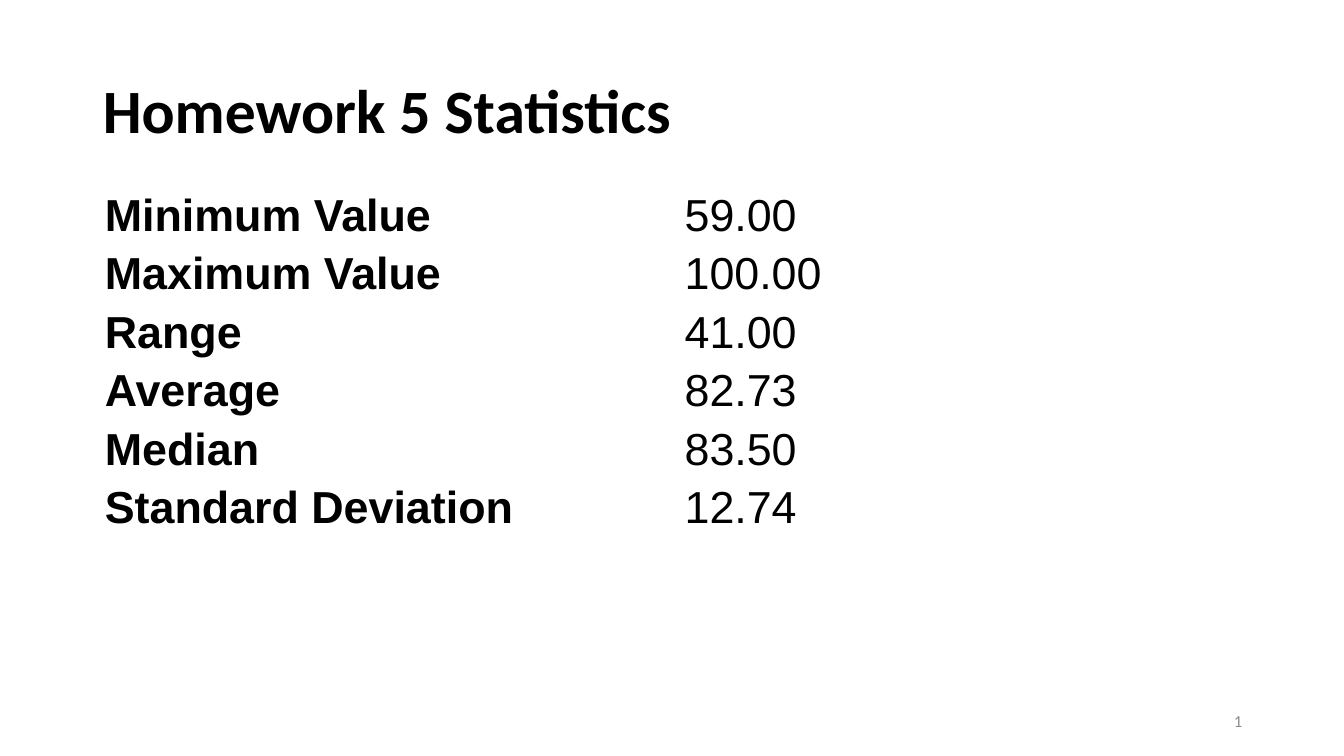
import dataclasses

import pptx
import pptx.dml.color
import pptx.enum.text
import pptx.util
from pptx.util import Inches

COLORS = {"text": "000000", "page_number": "8C8C8C"}
LEFT, WIDTH = 0.92, 11.5
ROW_HEIGHT = 0.58


@dataclasses.dataclass
class Statistic:
    label: str
    value: str


STATISTICS = [
    Statistic("Minimum Value", "59.00"),
    Statistic("Maximum Value", "100.00"),
    Statistic("Range", "41.00"),
    Statistic("Average", "82.73"),
    Statistic("Median", "83.50"),
    Statistic("Standard Deviation", "12.74"),
]


def add_text(paragraph, text: str, size: float, font: str, color: str, bold: bool = False) -> None:
    run = paragraph.add_run()
    run.text = text
    run.font.size = pptx.util.Pt(size)
    run.font.name = font
    run.font.bold = bold
    run.font.color.rgb = pptx.dml.color.RGBColor.from_string(COLORS[color])


def add_title(slide, text: str) -> None:
    title = slide.shapes.title
    title.left, title.top = Inches(LEFT), Inches(0.4)
    title.width, title.height = Inches(WIDTH), Inches(1.45)
    title.text_frame.vertical_anchor = pptx.enum.text.MSO_ANCHOR.MIDDLE
    paragraph = title.text_frame.paragraphs[0]
    paragraph.alignment = pptx.enum.text.PP_ALIGN.LEFT
    paragraph.line_spacing = 0.9
    add_text(paragraph, text, 44, "Calibri", "text", bold=True)


def fill_cell(cell, text: str, bold: bool) -> None:
    cell.fill.background()
    cell.vertical_anchor = pptx.enum.text.MSO_ANCHOR.MIDDLE
    cell.margin_left = cell.margin_right = Inches(0.12)
    cell.margin_top = cell.margin_bottom = Inches(0.03)
    add_text(cell.text_frame.paragraphs[0], text, 32, "Arial", "text", bold)


def add_statistics(slide, statistics: list[Statistic]) -> None:
    table = slide.shapes.add_table(
        len(statistics), 2, Inches(LEFT), Inches(1.85),
        Inches(WIDTH), Inches(ROW_HEIGHT * len(statistics)),
    ).table
    table.first_row = table.horz_banding = False
    for row, statistic in zip(table.rows, statistics):
        row.height = Inches(ROW_HEIGHT)
        fill_cell(row.cells[0], statistic.label, bold=True)
        fill_cell(row.cells[1], statistic.value, bold=False)


def add_page_number(slide, number: str) -> None:
    page_number = slide.shapes.add_textbox(Inches(9.42), Inches(6.95), Inches(3), Inches(0.4))
    frame = page_number.text_frame
    frame.word_wrap = True
    frame.vertical_anchor = pptx.enum.text.MSO_ANCHOR.MIDDLE
    frame.paragraphs[0].alignment = pptx.enum.text.PP_ALIGN.RIGHT
    add_text(frame.paragraphs[0], number, 12, "Calibri", "page_number")


def main() -> None:
    presentation = pptx.Presentation()
    presentation.slide_width = Inches(13.33)
    presentation.slide_height = Inches(7.5)
    slide = presentation.slides.add_slide(presentation.slide_layouts[5])

    # Heading, table of results, page number
    add_title(slide, "Homework 5 Statistics")
    add_statistics(slide, STATISTICS)
    add_page_number(slide, "1")

    presentation.save("out.pptx")


if __name__ == "__main__":
    main()
